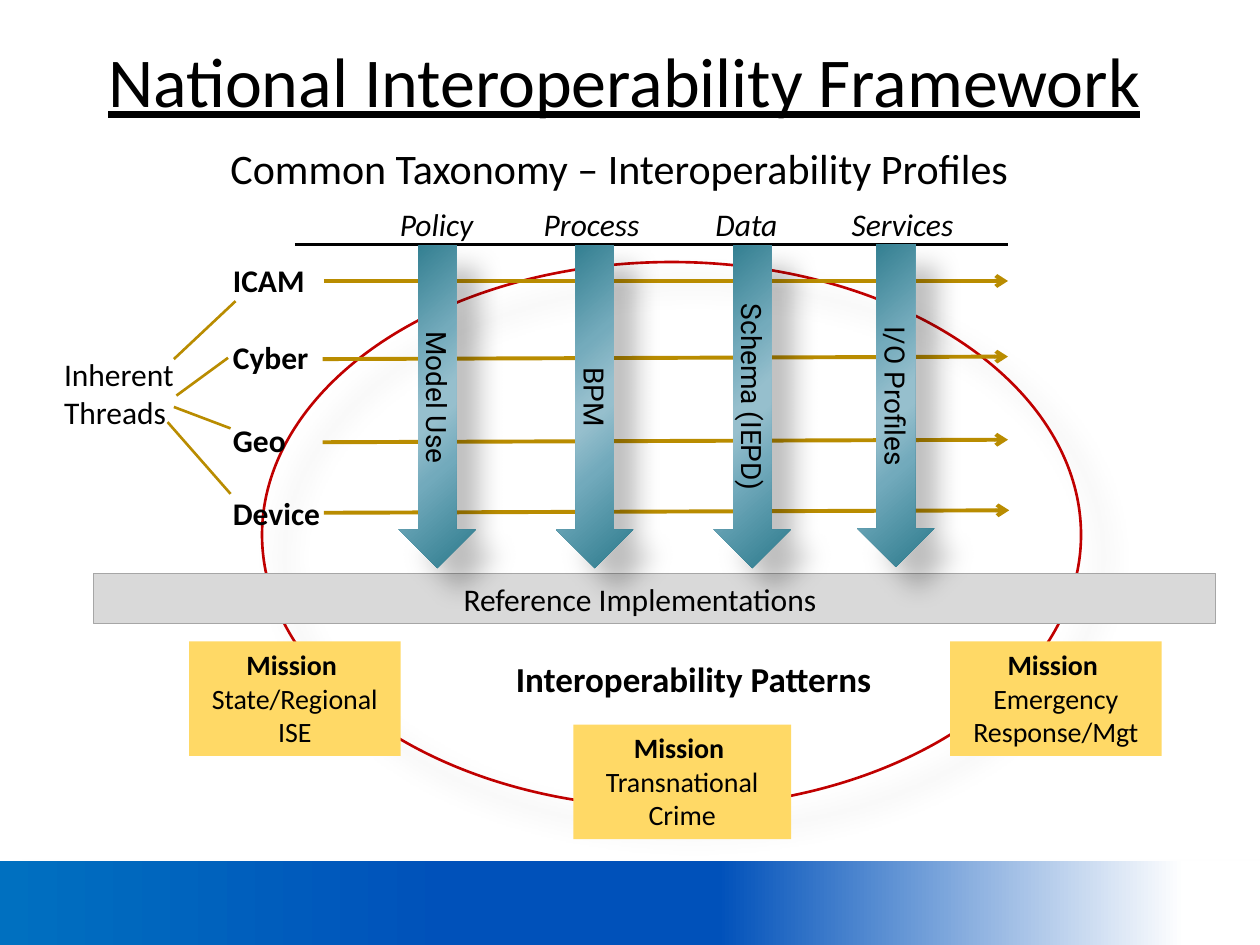
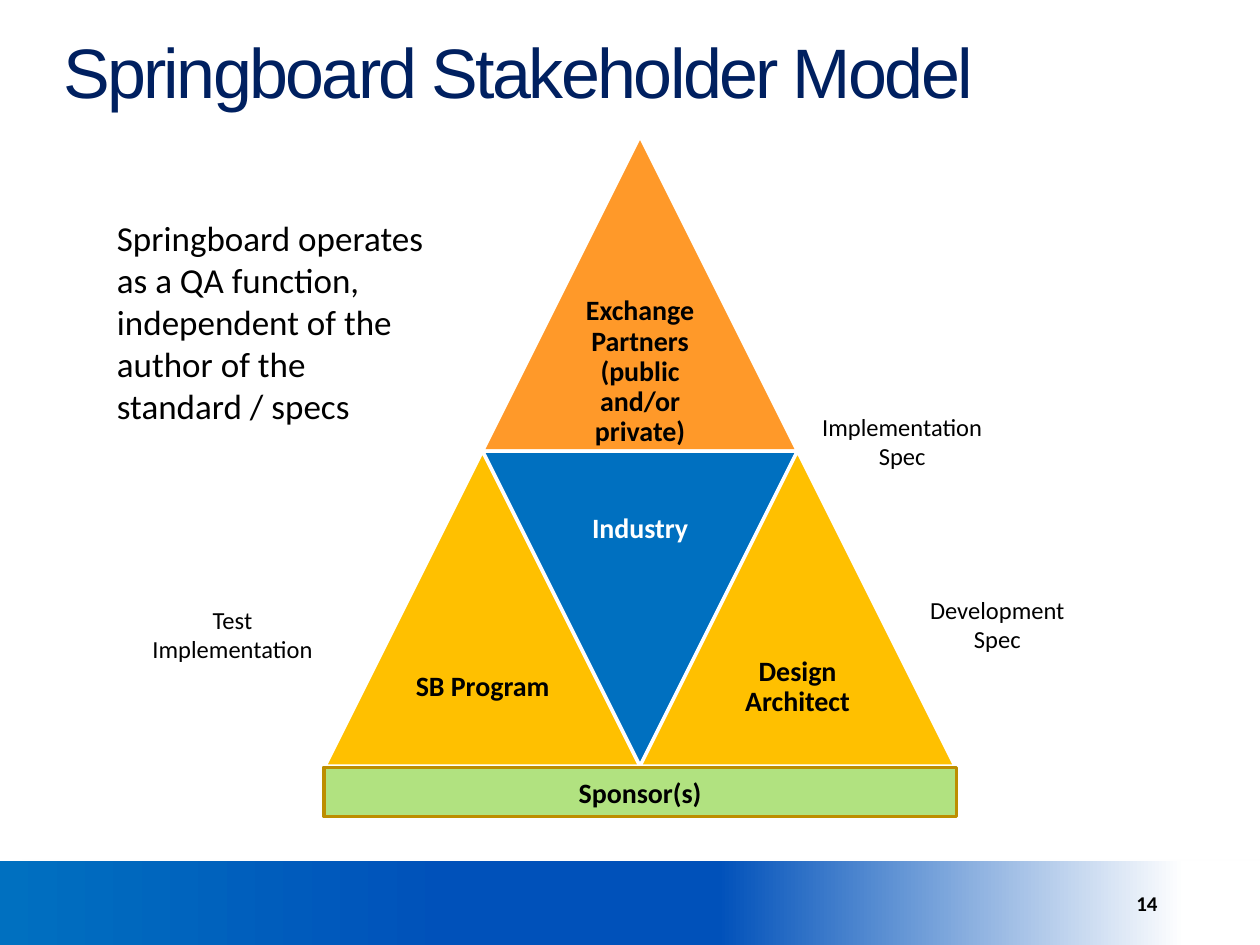
import dataclasses

import pptx
import pptx.dml.color
import pptx.enum.shapes
import pptx.enum.text
import pptx.oxml
import pptx.oxml.ns
import pptx.util

Inches = pptx.util.Inches
Pt = pptx.util.Pt
Align = pptx.enum.text.PP_ALIGN
Anchor = pptx.enum.text.MSO_ANCHOR
Shape = pptx.enum.shapes.MSO_SHAPE
TITLE_ONLY = 5


@dataclasses.dataclass(frozen=True)
class Theme:
    ink: str = "000000"
    paper: str = "FFFFFF"
    navy: str = "002060"
    ring: str = "C00000"
    thread: str = "B98C00"
    bar: str = "D9D9D9"
    bar_edge: str = "A6A6A6"
    card: str = "FFD966"
    orange: str = "FF9929"
    gold: str = "FFC000"
    blue: str = "0070C0"
    green: str = "B1E280"
    green_edge: str = "BD8E00"
    band: tuple = ((0, "0070C0"), (36, "0051BA"), (57, "0051BA"), (94, "FFFFFF"))
    steel: tuple = ((0, "2A798B"), (33, "72AABC"), (47, "96BFCD"),
                    (53, "96BFCD"), (68, "74ABBC"), (100, "2A798B"))
    body: str = "Calibri"
    heading: str = "Arial"
    arrow: str = "Roboto"
    title_size: int = 40
    subtitle_size: int = 24
    lead_size: int = 20
    label_size: int = 18
    card_size: int = 16
    note_size: int = 14
    number_size: int = 12


def rgb(color):
    return pptx.dml.color.RGBColor.from_string(color)


def add_xml(parent, tag, **attributes):
    element = pptx.oxml.parse_xml(f"<a:{tag} {pptx.oxml.ns.nsdecls('a')}/>")
    for name, value in attributes.items():
        element.set(name, str(value))
    parent.append(element)
    return element


class SlideBuilder:
    """Draws styled elements on the current slide."""

    def __init__(self, theme):
        self.theme = theme
        self.deck = pptx.Presentation()
        self.deck.slide_width = Inches(10)
        self.deck.slide_height = Inches(7.5)
        self.page = None

    def start_page(self):
        self.page = self.deck.slides.add_slide(self.deck.slide_layouts[TITLE_ONLY])
        self.shape(Shape.RECTANGLE, (0, 6.83, 10, 0.67), gradient=self.theme.band,
                   shadow=True)

    def set_text(self, frame, text, size, color=None, face=None, bold=False,
                 italic=False, align=Align.CENTER, anchor=Anchor.TOP, spacing=None):
        frame.text = text
        frame.word_wrap = True
        frame.auto_size = pptx.enum.text.MSO_AUTO_SIZE.NONE
        frame.vertical_anchor = anchor
        for para in frame.paragraphs:
            para.alignment = align
            para.line_spacing = spacing
            for span in para.runs:
                span.font.size = Pt(size)
                span.font.name = face or self.theme.body
                span.font.color.rgb = rgb(color or self.theme.ink)
                span.font.bold = bold
                span.font.italic = italic

    def set_insets(self, frame, left, top, right, bottom):
        frame.margin_left, frame.margin_top = Inches(left), Inches(top)
        frame.margin_right, frame.margin_bottom = Inches(right), Inches(bottom)

    def title(self, text, place, **style):
        title = self.page.shapes.title
        title.left, title.top, title.width, title.height = map(Inches, place)
        self.set_text(title.text_frame, text, self.theme.title_size, **style)
        return title.text_frame

    def text(self, text, place, size, **style):
        box = self.page.shapes.add_textbox(*map(Inches, place))
        self.set_text(box.text_frame, text, size, **style)
        return box.text_frame

    def shape(self, kind, place, fill=None, gradient=None, angle=0, edge=None,
              edge_width=1.5, shadow=False):
        shape = self.page.shapes.add_shape(kind, *map(Inches, place))
        if gradient:
            self.fill_gradient(shape, gradient, angle)
        elif fill:
            shape.fill.solid()
            shape.fill.fore_color.rgb = rgb(fill)
        else:
            shape.fill.background()
        if edge:
            shape.line.color.rgb = rgb(edge)
            shape.line.width = Pt(edge_width)
        else:
            shape.line.fill.background()
        shape.shadow.inherit = False
        if shadow:
            effects = shape.element.spPr.find(pptx.oxml.ns.qn("a:effectLst"))
            outer = add_xml(effects, "outerShdw", blurRad=Pt(15), dist=Pt(18),
                            dir=45 * 60000, algn="tl", rotWithShape=0)
            color = add_xml(outer, "srgbClr", val=self.theme.ink)
            add_xml(color, "alpha", val=26000)
        return shape

    def fill_gradient(self, shape, stops, angle):
        shape.fill.gradient()
        shape.fill.gradient_angle = -angle % 360
        stop_list = next(shape.element.spPr.iter(pptx.oxml.ns.qn("a:gsLst")))
        for stop in list(stop_list):
            stop_list.remove(stop)
        for percent, color in stops:
            add_xml(add_xml(stop_list, "gs", pos=percent * 1000), "srgbClr", val=color)

    def line(self, start, end, color, width=1.5, arrow=False):
        line = self.page.shapes.add_connector(
            pptx.enum.shapes.MSO_CONNECTOR.STRAIGHT, *map(Inches, start + end))
        line.line.color.rgb = rgb(color)
        line.line.width = Pt(width)
        properties = line.element.spPr
        if arrow:
            add_xml(properties.find(pptx.oxml.ns.qn("a:ln")), "tailEnd", type="arrow")
        add_xml(properties, "effectLst")

    def mission_card(self, place, mission):
        card = self.shape(Shape.RECTANGLE, place, fill=self.theme.card)
        frame = card.text_frame
        self.set_text(frame, "Mission \n" + mission, self.theme.card_size)
        frame.paragraphs[0].runs[0].font.bold = True

    def profile_arrow(self, center_x, center_y, text):
        length, breadth = 2.56, 0.61
        place = (center_x - length / 2, center_y - breadth / 2, length, breadth)
        arrow = self.shape(Shape.RIGHT_ARROW, place, gradient=self.theme.steel,
                           angle=139, shadow=True)
        arrow.rotation = 90
        self.set_text(arrow.text_frame, text, self.theme.card_size,
                      face=self.theme.arrow, anchor=Anchor.MIDDLE)

    def stakeholder(self, left, top, text, fill, color=None, inverted=False):
        side = 2.5
        triangle = self.shape(Shape.ISOSCELES_TRIANGLE, (left, top, side, side),
                              fill=fill, edge=self.theme.paper, edge_width=2)
        triangle.rotation = 180 if inverted else 0
        label_top = top if inverted else top + side / 2
        frame = self.text(text, (left + side / 4, label_top, side / 2, side / 2),
                          self.theme.card_size, color=color, bold=True,
                          anchor=Anchor.MIDDLE, spacing=0.9)
        self.set_insets(frame, 0.07, 0.07, 0.07, 0.07)


def build_framework(builder):
    theme = builder.theme
    builder.start_page()
    builder.shape(Shape.OVAL, (2.08, 2.08, 6.5, 4.33), edge=theme.ring, shadow=True)
    title = builder.title("National Interoperability Framework", (0.41, 0.25, 9.09, 0.77))
    title.paragraphs[0].runs[0].font.underline = True
    builder.line((2.34, 1.94), (8, 1.94), theme.ink)
    builder.text("Common Taxonomy – Interoperability Profiles",
                 (1.5, 1.08, 6.83, 0.5), theme.subtitle_size)

    for name, left, width, align in (("Policy", 3, 0.93, Align.CENTER),
                                     ("Process", 4.17, 1.05, Align.CENTER),
                                     ("Data", 5.58, 0.85, Align.LEFT),
                                     ("Services", 6.66, 1.18, Align.LEFT)):
        builder.text(name, (left, 1.58, width, 0.4), theme.label_size,
                     italic=True, align=align)

    bar = builder.shape(Shape.RECTANGLE, (0.74, 4.55, 8.91, 0.4), fill=theme.bar,
                        edge=theme.bar_edge, edge_width=0.75)
    builder.set_text(bar.text_frame, "Reference Implementations", theme.label_size,
                     anchor=Anchor.MIDDLE)
    builder.set_insets(bar.text_frame, 0.1, 0.05, 0.33, 0.05)

    builder.mission_card((7.54, 5.09, 1.68, 0.91), "Emergency\nResponse/Mgt")
    builder.mission_card((4.55, 5.75, 1.73, 0.91), "Transnational\nCrime")
    builder.mission_card((1.5, 5.09, 1.68, 0.91), "State/Regional\nISE")
    builder.text("Interoperability Patterns", (3.47, 5.17, 4.07, 0.44),
                 theme.lead_size, bold=True)

    builder.text("Inherent Threads", (0.41, 2.77, 1.18, 0.71), theme.label_size,
                 align=Align.LEFT)
    for name, top, start, end, branch_start, branch_end in (
            ("ICAM", 2.02, (2.57, 2.23), (8, 2.23), (1.38, 2.85), (1.87, 2.39)),
            ("Cyber", 2.63, (2.56, 2.85), (8, 2.83), (1.4, 3.14), (1.81, 2.84)),
            ("Geo", 3.29, (2.56, 3.51), (8, 3.49), (1.38, 3.23), (1.83, 3.4)),
            ("Device", 3.87, (2.57, 4.07), (8.01, 4.05), (1.33, 3.35), (1.83, 3.92))):
        builder.text(name, (1.75, top, 0.95, 0.4), theme.label_size, bold=True,
                     align=Align.LEFT)
        builder.line(start, end, theme.thread, 2.25, arrow=True)
        builder.line(branch_start, branch_end, theme.thread)

    for text, center_x, center_y in (("Model Use", 3.47, 3.23), ("BPM", 4.72, 3.23),
                                     ("Schema (IEPD)", 5.97, 3.23),
                                     ("I/O Profiles", 7.11, 3.22)):
        builder.profile_arrow(center_x, center_y, text)


def build_stakeholders(builder):
    theme = builder.theme
    builder.start_page()
    title = builder.title("Springboard Stakeholder Model", (0.5, 0.3, 9.08, 0.95),
                          color=theme.navy, face=theme.heading, align=Align.LEFT,
                          spacing=0.9)
    builder.set_insets(title, 0, 0, 0, 0)
    title.paragraphs[0].runs[0]._r.get_or_add_rPr().set("spc", "-150")

    builder.stakeholder(3.83, 1.08, "Exchange Partners (public and/or private)",
                        theme.orange)
    builder.stakeholder(2.58, 3.58, "SB Program", theme.gold)
    builder.stakeholder(3.83, 3.58, "Industry", theme.blue, theme.paper, inverted=True)
    builder.stakeholder(5.08, 3.58, "Design Architect", theme.gold)

    sponsors = builder.shape(Shape.RECTANGLE, (2.57, 6.09, 5.02, 0.39),
                             fill=theme.green, edge=theme.green_edge, edge_width=2)
    builder.set_text(sponsors.text_frame, "Sponsor(s)", theme.card_size, bold=True,
                     anchor=Anchor.MIDDLE)

    for text, left, top, width in (("Implementation Spec", 6.4, 3.22, 1.52),
                                   ("Development Spec", 7.24, 4.67, 1.35),
                                   ("Test Implementation", 1, 4.75, 1.69)):
        builder.text(text, (left, top, width, 0.57), theme.note_size)
    builder.text("14", (8.92, 7.02, 0.83, 0.4), theme.number_size, bold=True,
                 align=Align.LEFT)
    builder.text("Springboard operates as a QA function, independent of the author "
                 "of the standard / specs", (0.83, 1.67, 2.7, 1.78), theme.lead_size,
                 align=Align.LEFT)


def main():
    builder = SlideBuilder(Theme())
    build_framework(builder)
    build_stakeholders(builder)
    builder.deck.save("out.pptx")


if __name__ == "__main__":
    main()
